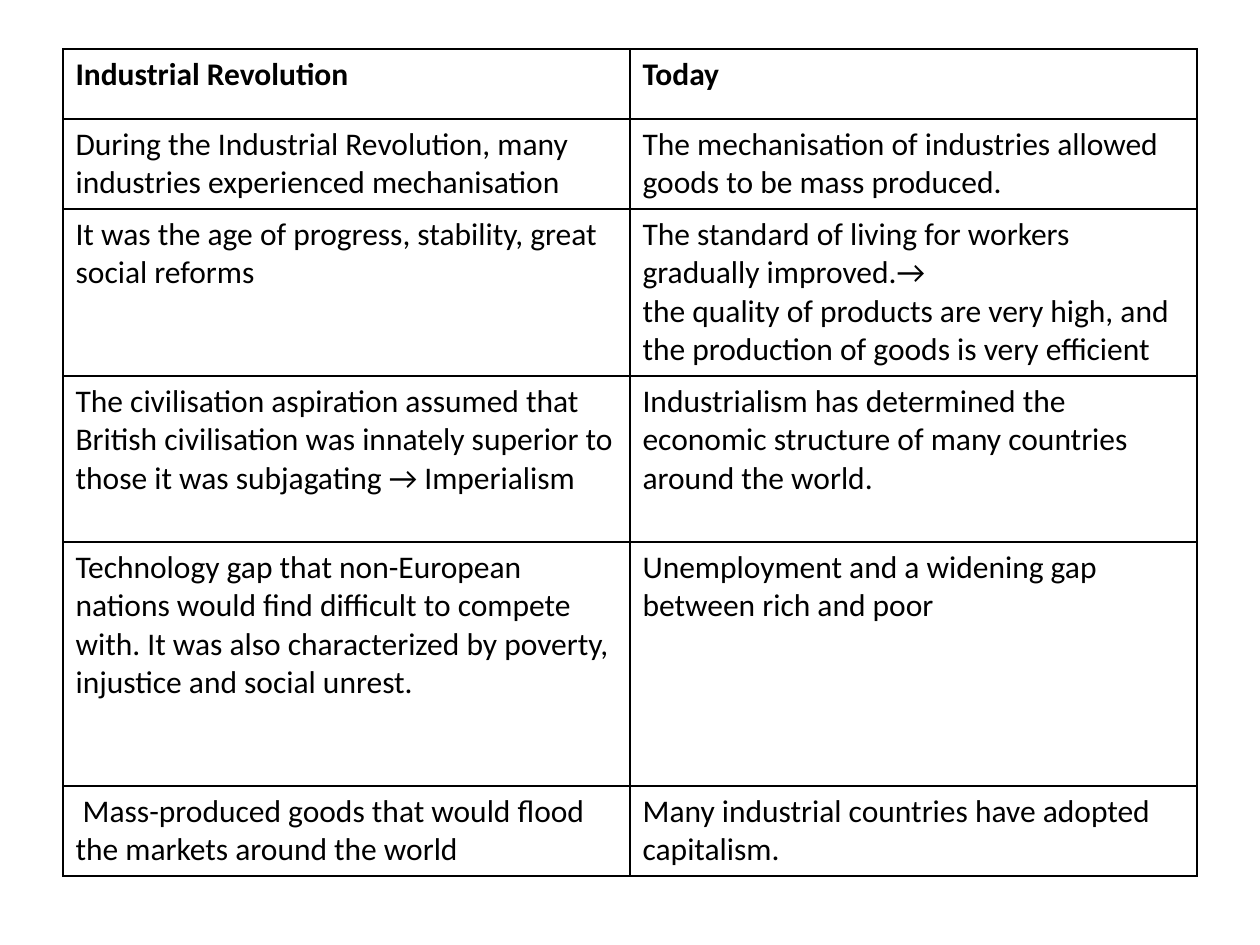
from typing import NamedTuple

from lxml.etree import SubElement
from pptx import Presentation as new_presentation
from pptx.dml.color import RGBColor
from pptx.oxml.ns import qn
from pptx.util import Emu, Pt

EMU_PER_PX = 914400 / 126
COLORS = {"text": "000000", "border": "000000", "cell": "FFFFFF"}
FONT = {"name": "Calibri", "size": Pt(18)}
TABLE_FLAGS = {"first_row": False, "horz_banding": False}
BORDER_WIDTH = Pt(1)
BORDER_SIDES = ("a:lnL", "a:lnR", "a:lnT", "a:lnB")
LEFT, TOP, COLUMN_WIDTH = 63, 49, 567


class Comparison(NamedTuple):
    height: int
    past: str
    today: str
    bold: bool = False


COMPARISONS = [
    Comparison(70, "Industrial Revolution", "Today", bold=True),
    Comparison(
        90,
        "During the Industrial Revolution, many industries experienced mechanisation",
        "The mechanisation of industries allowed goods to be mass produced.",
    ),
    Comparison(
        167,
        "It was the age of progress, stability, great social reforms",
        "The standard of living for workers gradually improved.→\n"
        "the quality of products are very high, and the production of goods "
        "is very efficient",
    ),
    Comparison(
        166,
        "The civilisation aspiration assumed that British civilisation was innately "
        "superior to those it was subjagating → Imperialism",
        "Industrialism has determined the economic structure of many countries "
        "around the world.",
    ),
    Comparison(
        244,
        "Technology gap that non-European nations would find difficult to compete "
        "with. It was also characterized by poverty, injustice and social unrest.",
        "Unemployment and a widening gap between rich and poor",
    ),
    Comparison(
        90,
        " Mass-produced goods that would flood the markets around the world",
        "Many industrial countries have adopted capitalism.",
    ),
]


def px(length: int) -> Emu:
    return Emu(round(length * EMU_PER_PX))


def set_attributes(target, values: dict) -> None:
    for name, value in values.items():
        setattr(target, name, value)


def add_borders(cell) -> None:
    """Put the four lines before the fill, as the schema orders them."""
    properties = cell._tc.get_or_add_tcPr()
    for position, side in enumerate(BORDER_SIDES):
        line = SubElement(properties, qn(side), w=str(BORDER_WIDTH))
        fill = SubElement(line, qn("a:solidFill"))
        SubElement(fill, qn("a:srgbClr"), val=COLORS["border"])
        properties.insert(position, line)


def fill_cell(cell, text: str, bold: bool) -> None:
    cell.text = text
    for paragraph in cell.text_frame.paragraphs:
        set_attributes(paragraph.font, {**FONT, "bold": bold})
        for run in paragraph.runs:
            set_attributes(run.font, {**FONT, "bold": bold})
            run.font.color.rgb = RGBColor.from_string(COLORS["text"])
    cell.fill.solid()
    cell.fill.fore_color.rgb = RGBColor.from_string(COLORS["cell"])
    add_borders(cell)


def add_comparison_table(slide, comparisons: list[Comparison]) -> None:
    height = sum(comparison.height for comparison in comparisons)
    table = slide.shapes.add_table(
        len(comparisons), 2, px(LEFT), px(TOP), px(2 * COLUMN_WIDTH), px(height)
    ).table
    set_attributes(table, TABLE_FLAGS)
    for row, comparison in zip(table.rows, comparisons):
        row.height = px(comparison.height)
        for cell, text in zip(row.cells, (comparison.past, comparison.today)):
            fill_cell(cell, text, comparison.bold)


def main() -> None:
    presentation = new_presentation()
    set_attributes(presentation, {"slide_width": px(1260), "slide_height": px(945)})
    slide = presentation.slides.add_slide(presentation.slide_layouts[6])
    add_comparison_table(slide, COMPARISONS)
    presentation.save("out.pptx")


if __name__ == "__main__":
    main()
